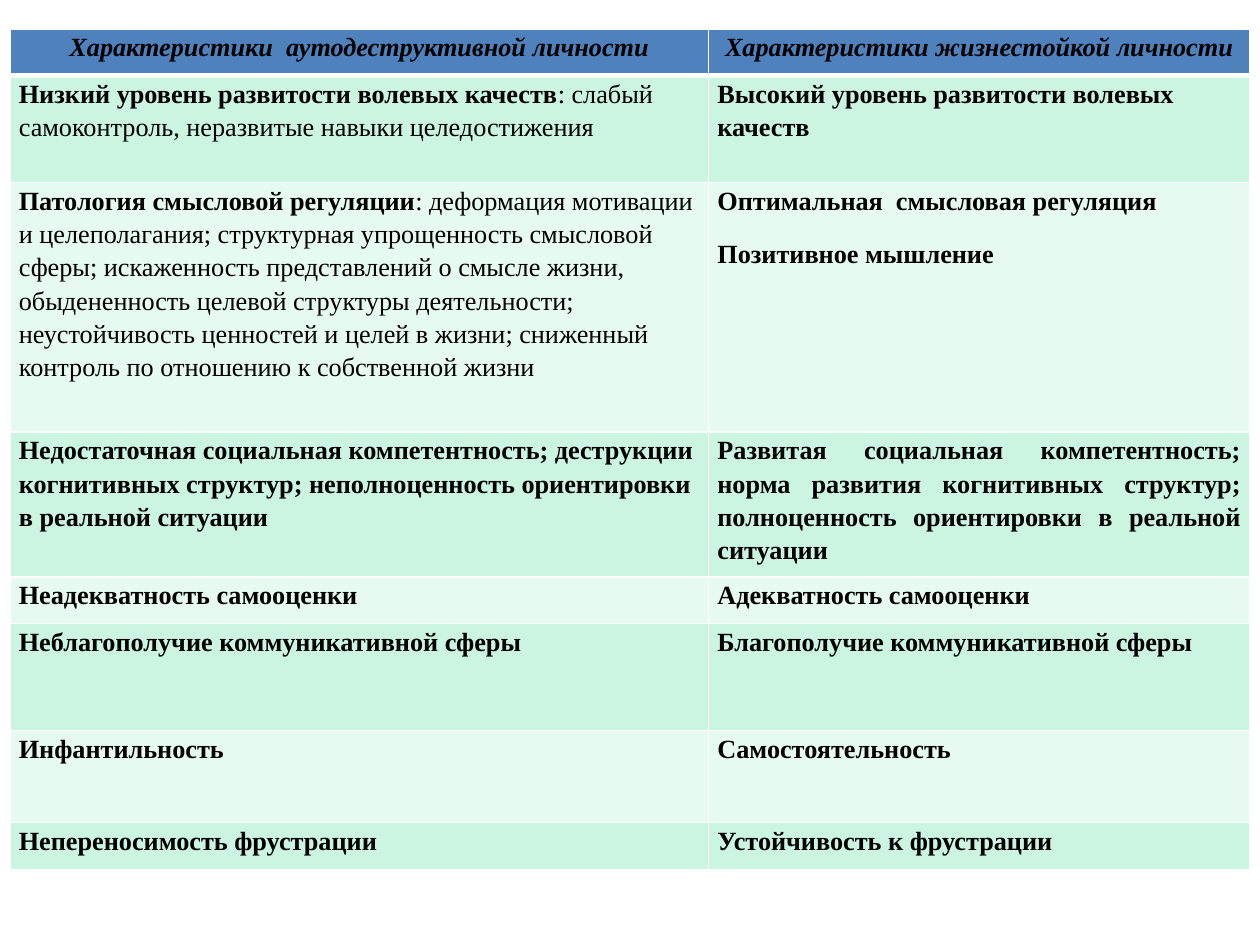
from lxml import etree
from pptx import Presentation
from pptx import util as u
from pptx.dml import color
from pptx.enum import text
from pptx.oxml import ns

FONT = "Times New Roman"
HEADER_FILL = "4F81BD"
BAND_FILLS = ("CBF5E1", "E7FAF1")
COLUMN_WIDTHS = (5.55, 4.3)
ROW_HEIGHTS = (0.37, 0.85, 1.98, 1.15, 0.37, 0.85, 0.73, 0.37)
HEADERS = (
    "Характеристики  аутодеструктивной личности",
    "Характеристики жизнестойкой личности",
)
TRAITS = (
    (
        [("Низкий уровень развитости волевых качеств",
          ": слабый самоконтроль, неразвитые навыки целедостижения")],
        [("Высокий уровень развитости волевых качеств",)],
    ),
    (
        [("Патология смысловой регуляции",
          ": деформация мотивации и целеполагания; структурная упрощенность "
          "смысловой сферы; искаженность представлений о смысле жизни, "
          "обыдененность целевой структуры деятельности; неустойчивость "
          "ценностей и целей в жизни; сниженный контроль по отношению к "
          "собственной жизни")],
        [("Оптимальная  смысловая регуляция",), ("Позитивное мышление",)],
    ),
    (
        [("Недостаточная социальная компетентность; деструкции когнитивных "
          "структур; неполноценность ориентировки в реальной ситуации",)],
        [("Развитая социальная компетентность; норма развития когнитивных "
          "структур; полноценность ориентировки в реальной ситуации",)],
    ),
    ([("Неадекватность самооценки",)], [("Адекватность самооценки",)]),
    ([("Неблагополучие коммуникативной сферы",)],
     [("Благополучие коммуникативной сферы",)]),
    ([("Инфантильность",)], [("Самостоятельность",)]),
    ([("Непереносимость фрустрации",)], [("Устойчивость к фрустрации",)]),
)
JUSTIFIED_CELL = (3, 1)


def rgb(value):
    """Return the colour for a hex string."""
    return color.RGBColor.from_string(value)


def set_borders(cell, **widths):
    """Draw white cell borders with the given widths in points."""
    properties = cell._tc.get_or_add_tcPr()
    for side in "LRTB":
        line = etree.SubElement(properties, ns.qn(f"a:ln{side}"),
                                w=str(u.Pt(widths.get(side, 1))))
        fill = etree.SubElement(line, ns.qn("a:solidFill"))
        etree.SubElement(fill, ns.qn("a:srgbClr"), val="FFFFFF")


def style_cell(cell, fill, **widths):
    """Set the margins, borders and fill of a cell."""
    cell.margin_left = cell.margin_right = u.Inches(0.07)
    cell.margin_top = cell.margin_bottom = 0
    set_borders(cell, **widths)
    cell.fill.solid()
    cell.fill.fore_color.rgb = rgb(fill)


def write_cell(cell, paragraphs, alignment, italic=False):
    """Write paragraphs whose first run is bold and the rest plain."""
    frame = cell.text_frame
    for index, parts in enumerate(paragraphs):
        paragraph = frame.add_paragraph() if index else frame.paragraphs[0]
        paragraph.alignment = alignment
        paragraph.line_spacing = 1.15
        paragraph.space_before = u.Pt(11.1 if index else 0)
        for position, part in enumerate(parts):
            run = paragraph.add_run()
            run.text = part
            font = run.font
            font.name, font.size = FONT, u.Pt(15)
            font.bold, font.italic = position == 0, italic
            font.color.rgb = rgb("000000")


def add_comparison_table(slide, left, top, width, height):
    """Place the table that compares the two personality types."""
    table = slide.shapes.add_table(
        len(ROW_HEIGHTS), len(COLUMN_WIDTHS), u.Inches(left), u.Inches(top),
        u.Inches(width), u.Inches(height)).table
    table.horz_banding = False
    for column, share in zip(table.columns, COLUMN_WIDTHS):
        column.width = u.Inches(width * share / sum(COLUMN_WIDTHS))
    for row, share in zip(table.rows, ROW_HEIGHTS):
        row.height = u.Inches(height * share / sum(ROW_HEIGHTS))
    for column, header in enumerate(HEADERS):
        cell = table.cell(0, column)
        style_cell(cell, HEADER_FILL, B=3)
        write_cell(cell, [(header,)], text.PP_ALIGN.CENTER, italic=True)
    for row, traits in enumerate(TRAITS, start=1):
        for column, paragraphs in enumerate(traits):
            cell = table.cell(row, column)
            style_cell(cell, BAND_FILLS[(row - 1) % 2], T=3 if row == 1 else 1)
            justified = (row, column) == JUSTIFIED_CELL
            write_cell(cell, paragraphs, text.PP_ALIGN.JUSTIFY if justified
                       else text.PP_ALIGN.LEFT)


def main():
    """Build and save the presentation."""
    presentation = Presentation()
    presentation.slide_width = u.Inches(10)
    presentation.slide_height = u.Inches(7.5)
    slide = presentation.slides.add_slide(presentation.slide_layouts[6])
    add_comparison_table(slide, 0.08, 0.23, 9.84, 6.67)
    presentation.save("out.pptx")


if __name__ == "__main__":
    main()
